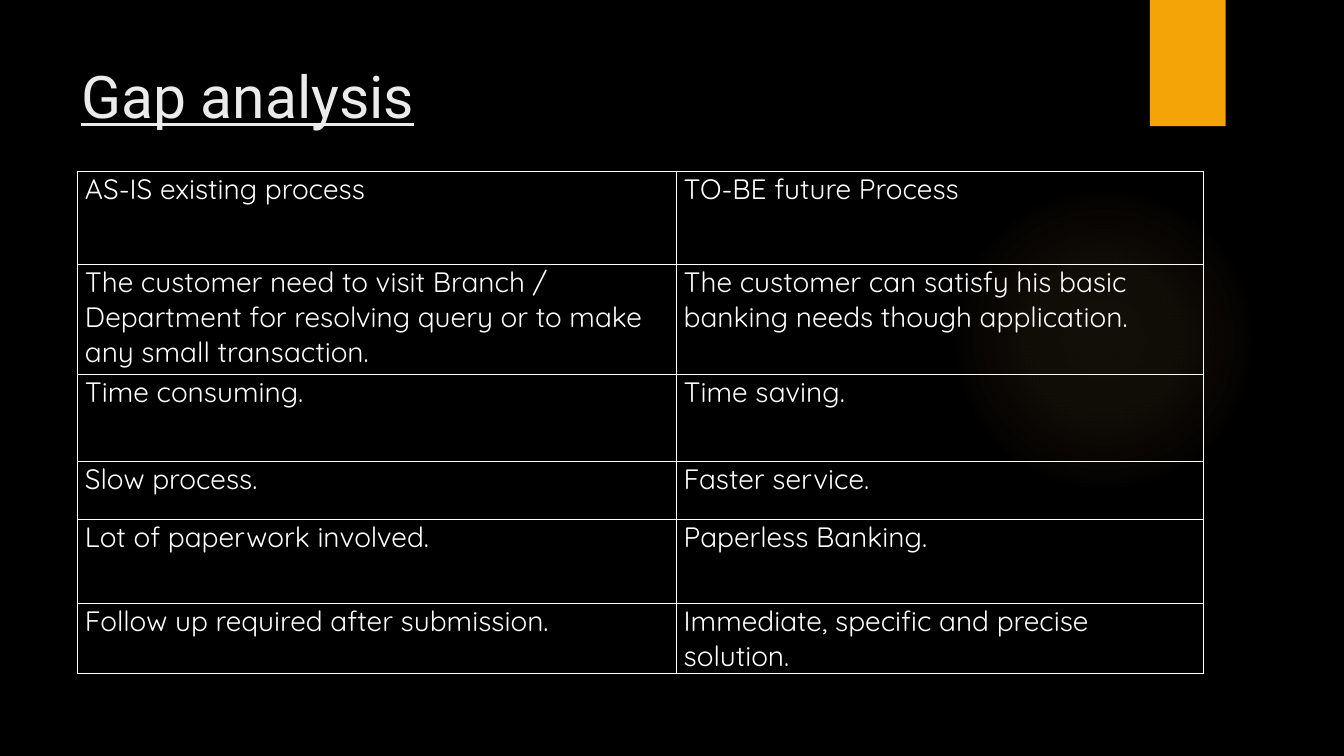
from lxml import etree
from pptx import Presentation
from pptx.dml.color import RGBColor
from pptx.enum import shapes, text
from pptx.oxml import parse_xml
from pptx.oxml.ns import nsdecls, qn
from pptx.util import Cm, Pt

BLACK = RGBColor(0x00, 0x00, 0x00)
WHITE = RGBColor(0xFF, 0xFF, 0xFF)
TITLE_GREY = RGBColor(0xEB, 0xEB, 0xEB)
AMBER = RGBColor(0xF5, 0xA4, 0x08)
GLOW = RGBColor(0xFA, 0xC9, 0x6A)
GLOW_STOPS = [(0, 7), (36, 6), (69, 0)]  # position and opacity, in percent

COLUMN_WIDTHS = [15.09, 13.28]
GAPS = [  # row height in cm, as-is, to-be
    (2.34, "AS-IS existing process", "TO-BE future Process"),
    (2.78, "The customer need to visit Branch / Department for resolving query "
           "or to make any small transaction.",
     "The customer can satisfy his basic banking needs though application."),
    (2.19, "Time consuming.", "Time saving."),
    (1.46, "Slow process.", "Faster service."),
    (2.12, "Lot of paperwork involved.", "Paperless Banking."),
    (1.77, "Follow up required after submission.",
     "Immediate, specific and precise solution."),
]


def style_text(paragraph, font_name, size, color, underline=None):
    for run in paragraph.runs:
        run.font.name = font_name
        run.font.size = Pt(size)
        run.font.color.rgb = color
        run.font.underline = underline


def add_plain_shape(slide, preset, left, top, width, height):
    shape = slide.shapes.add_shape(preset, Cm(left), Cm(top), Cm(width), Cm(height))
    shape.shadow.inherit = False
    shape.line.fill.background()
    return shape


def add_glow(slide, left, top, diameter):
    """Add a circle that fades out from its centre."""
    glow = add_plain_shape(slide, shapes.MSO_SHAPE.OVAL, left, top, diameter, diameter)
    stops = "".join(
        f'<a:gs pos="{position * 1000}"><a:srgbClr val="{GLOW}">'
        f'<a:alpha val="{opacity * 1000}"/></a:srgbClr></a:gs>'
        for position, opacity in GLOW_STOPS)
    gradient = parse_xml(
        f'<a:gradFill {nsdecls("a")}><a:gsLst>{stops}</a:gsLst><a:path path="circle">'
        '<a:fillToRect l="50000" t="50000" r="50000" b="50000"/></a:path></a:gradFill>')
    glow.element.spPr.find(qn("a:prstGeom")).addnext(gradient)


def add_ribbon(slide, left, top, width, height):
    ribbon = add_plain_shape(slide, shapes.MSO_SHAPE.RECTANGLE, left, top, width, height)
    ribbon.fill.solid()
    ribbon.fill.fore_color.rgb = AMBER


def add_title(slide, left, top, width, height):
    title = slide.shapes.add_textbox(Cm(left), Cm(top), Cm(width), Cm(height)).text_frame
    title.word_wrap = True
    title.vertical_anchor = text.MSO_ANCHOR.MIDDLE
    title.text = "Gap analysis"
    style_text(title.paragraphs[0], "Roboto", 42, TITLE_GREY, underline=True)


def set_borders(cell, color, width):
    properties = cell._tc.get_or_add_tcPr()
    for side in ("lnL", "lnR", "lnT", "lnB"):
        border = etree.SubElement(properties, qn(f"a:{side}"), w=str(Pt(width)))
        fill = etree.SubElement(border, qn("a:solidFill"))
        etree.SubElement(fill, qn("a:srgbClr"), val=str(color))


def fill_cell(cell, wording):
    set_borders(cell, WHITE, 1)
    cell.fill.background()
    cell.margin_left = cell.margin_right = Cm(0.18)
    cell.margin_top = cell.margin_bottom = 0
    cell.text_frame.text = wording
    paragraph = cell.text_frame.paragraphs[0]
    paragraph.space_after = Pt(10)
    style_text(paragraph, "Quicksand", 20, WHITE)


def add_gap_table(slide, left, top):
    heights = [height for height, *_ in GAPS]
    table = slide.shapes.add_table(
        len(GAPS), len(COLUMN_WIDTHS), Cm(left), Cm(top),
        Cm(sum(COLUMN_WIDTHS)), Cm(sum(heights))).table
    table.first_row = table.horz_banding = False
    for column, width in zip(table.columns, COLUMN_WIDTHS):
        column.width = Cm(width)
    for row, (height, *wordings) in zip(table.rows, GAPS):
        row.height = Cm(height)
        for cell, wording in zip(row.cells, wordings):
            fill_cell(cell, wording)


def build_gap_slide(deck):
    slide = deck.slides.add_slide(deck.slide_layouts[6])
    slide.background.fill.solid()
    slide.background.fill.fore_color.rgb = BLACK
    add_glow(slide, 23.9, 4.65, 7.82)
    add_ribbon(slide, 28.98, 0, 1.91, 3.18)
    add_title(slide, 1.8, 1.27, 26.14, 2.26)
    add_gap_table(slide, 1.96, 4.32)


def main():
    deck = Presentation()
    deck.slide_width, deck.slide_height = Cm(33.87), Cm(19.05)
    build_gap_slide(deck)
    deck.save("out.pptx")


if __name__ == "__main__":
    main()
